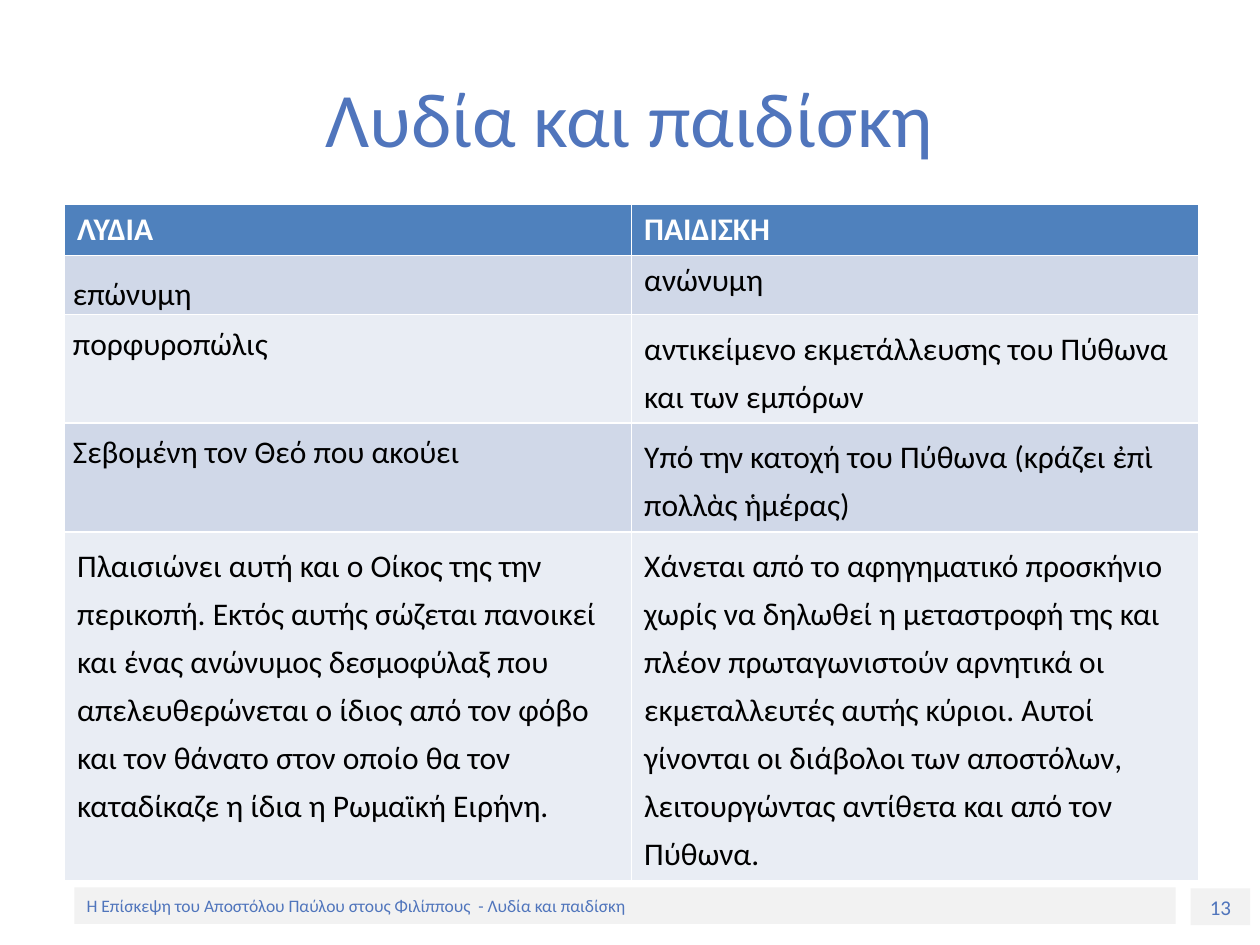
from pptx import Presentation
from pptx.dml.color import RGBColor
from pptx.enum.shapes import MSO_SHAPE as Shape
from pptx.enum.text import MSO_ANCHOR as Anchor, PP_ALIGN as Align
from pptx.util import Pt

BLUE = "5075BC"
HEADER_FILL = "4F81BD"
BAND_FILLS = ["E9EDF4", "D0D8E8"]


def style(para, size, color, bold=False, align=Align.LEFT):
    para.alignment = align
    for span in para.runs:
        span.font.name = "Calibri"
        span.font.size = Pt(size)
        span.font.bold = bold
        span.font.color.rgb = RGBColor.from_string(color)


deck = Presentation()
deck.slide_width, deck.slide_height = Pt(720), Pt(540)
page = deck.slides.add_slide(deck.slide_layouts[5])

# Footer strip and page number
footer_parts = [
    ("13", 680.4, 507.6, 34, 12, Align.CENTER),
    ("Η Επίσκεψη του Αποστόλου Παύλου στους Φιλίππους  - Λυδία και παιδίσκη",
     42.5, 507, 629.3, 10, Align.LEFT),
]
for text, left, top, width, size, align in footer_parts:
    box = page.shapes.add_shape(Shape.RECTANGLE, Pt(left), Pt(top), Pt(width), Pt(21))
    box.shadow.inherit = False
    box.fill.solid()
    box.fill.fore_color.rgb = RGBColor.from_string("F2F2F2")
    box.line.fill.background()
    box.text_frame.word_wrap = True
    box.text_frame.vertical_anchor = Anchor.MIDDLE
    box.text_frame.text = text
    style(box.text_frame.paragraphs[0], size, BLUE, align=align)

# Title
title = page.shapes.title
title.left, title.top, title.width, title.height = Pt(36), Pt(21.6), Pt(648), Pt(90)
title.text_frame.vertical_anchor = Anchor.MIDDLE
title.text_frame.text = "Λυδία και παιδίσκη"
style(title.text_frame.paragraphs[0], 44, BLUE, align=Align.CENTER)

# Comparison table
rows = [
    ("ΛΥΔΙΑ", "ΠΑΙΔΙΣΚΗ"),
    ("επώνυμη", "ανώνυμη"),
    ("πορφυροπώλις", "αντικείμενο εκμετάλλευσης του Πύθωνα και των εμπόρων"),
    ("Σεβομένη τον Θεό που ακούει",
     "Υπό την κατοχή του Πύθωνα (κράζει ἐπὶ πολλὰς ἡμέρας)"),
    ("Πλαισιώνει αυτή και ο Οίκος της την περικοπή. Εκτός αυτής σώζεται πανοικεί "
     "και ένας ανώνυμος δεσμοφύλαξ που απελευθερώνεται ο ίδιος από τον φόβο και "
     "τον θάνατο στον οποίο θα τον καταδίκαζε η ίδια η Ρωμαϊκή Ειρήνη.",
     "Χάνεται από το αφηγηματικό προσκήνιο χωρίς να δηλωθεί η μεταστροφή της και "
     "πλέον πρωταγωνιστούν αρνητικά οι εκμεταλλευτές αυτής κύριοι. Αυτοί γίνονται "
     "οι διάβολοι των αποστόλων, λειτουργώντας αντίθετα και από τον Πύθωνα."),
]
row_heights = [29.2, 32.4, 59.8, 59.8, 197.3]
line_spacings = {(1, 0): 1.5, (0, 0): 1, (0, 1): 1, (1, 1): 1}
justified = [(1, 0), (2, 0)]
tight_cells = [(1, 0), (2, 0), (3, 0)]

table = page.shapes.add_table(len(rows), 2, Pt(36.9), Pt(116.9), Pt(648),
                              Pt(sum(row_heights))).table
for r, (texts, height) in enumerate(zip(rows, row_heights)):
    table.rows[r].height = Pt(height)
    for c, text in enumerate(texts):
        cell = table.cell(r, c)
        cell.fill.solid()
        cell.fill.fore_color.rgb = RGBColor.from_string(
            BAND_FILLS[r % 2] if r else HEADER_FILL)
        if (r, c) in tight_cells:
            cell.margin_left = cell.margin_right = Pt(4.8)
            cell.margin_top, cell.margin_bottom = Pt(0.6), Pt(0)
        cell.text_frame.text = text
        para = cell.text_frame.paragraphs[0]
        para.line_spacing = line_spacings.get((r, c), 1.25)
        style(para, 18, "000000" if r else "FFFFFF", bold=r == 0,
              align=Align.JUSTIFY if (r, c) in justified else Align.LEFT)

deck.save("out.pptx")
